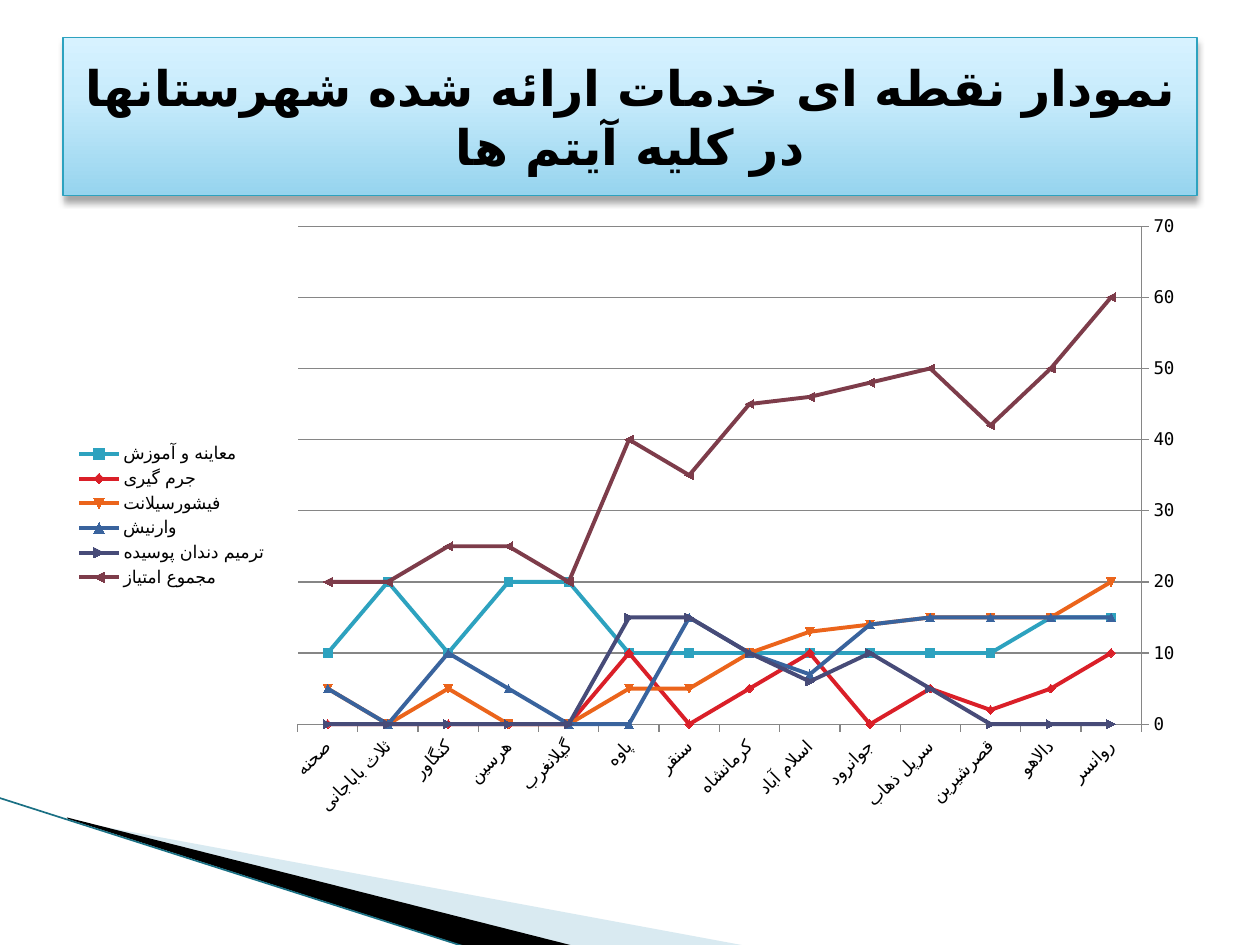
from lxml.etree import SubElement
from pptx import Presentation
from pptx.chart.data import CategoryChartData as ChartData
from pptx.dml.color import RGBColor
from pptx.enum.chart import XL_CHART_TYPE as ChartType, XL_LEGEND_POSITION as LegendSide, XL_TICK_MARK as Tick
from pptx.enum.shapes import MSO_CONNECTOR as Connector, MSO_SHAPE as Shape
from pptx.enum.text import MSO_ANCHOR as Anchor, PP_ALIGN as Align
from pptx.oxml import parse_xml
from pptx.oxml.ns import nsdecls, qn
from pptx.util import Cm, Pt

TITLE = "نمودار نقطه ای خدمات ارائه شده شهرستانها در کلیه آیتم ها"
CITIES = ["روانسر", "دالاهو", "قصرشیرین", "سرپل ذهاب", "جوانرود", "اسلام آباد", "کرمانشاه",
          "سنقر", "پاوه", "گیلانغرب", "هرسین", "کنگاور", "ثلاث باباجانی", "صحنه"]
SERVICES = [
    ("معاینه و آموزش", "2DA2BF", [15, 15, 10, 10, 10, 10, 10, 10, 10, 20, 20, 10, 20, 10]),
    ("جرم گیری", "DA1F28", [10, 5, 2, 5, 0, 10, 5, 0, 10, 0, 0, 0, 0, 0]),
    ("فیشورسیلانت", "EB641B", [20, 15, 15, 15, 14, 13, 10, 5, 5, 0, 0, 5, 0, 5]),
    ("وارنیش", "39639D", [15, 15, 15, 15, 14, 7, 10, 15, 0, 0, 5, 10, 0, 5]),
    ("ترمیم دندان پوسیده", "474B78", [0, 0, 0, 5, 10, 6, 10, 15, 15, 0, 0, 0, 0, 0]),
    ("مجموع امتیاز", "7D3C4A", [60, 50, 42, 50, 48, 46, 45, 35, 40, 20, 25, 25, 20, 20]),
]


def rgb(code):
    return RGBColor.from_string(code)


class SlideBuilder:
    font = "DejaVu Sans Mono"
    script_font = "DejaVu Sans"
    ink = "000000"
    accent = "2DA2BF"
    grid = "868686"

    def __init__(self, page):
        self.page = page

    def polygon(self, points, color, opacity=100):
        start, *rest = [(Cm(x), Cm(y)) for x, y in points]
        builder = self.page.shapes.build_freeform(*start)
        builder.add_line_segments(rest)
        shape = builder.convert_to_shape()
        shape.shadow.inherit = False
        shape.fill.solid()
        shape.fill.fore_color.rgb = rgb(color)
        shape.line.fill.background()
        if opacity < 100:
            tint = shape.fill._xPr.find(".//" + qn("a:srgbClr"))
            SubElement(tint, qn("a:alpha"), val=str(opacity * 1000))

    def line(self, start, end, color, width):
        ends = [Cm(value) for value in (*start, *end)]
        connector = self.page.shapes.add_connector(Connector.STRAIGHT, *ends)
        connector.line.color.rgb = rgb(color)
        connector.line.width = Pt(width)
        SubElement(connector._element.spPr, qn("a:effectLst"))

    def title(self, text, frame, stops):
        box = self.page.shapes.add_shape(Shape.RECTANGLE, *map(Cm, frame))
        box.line.color.rgb = rgb(self.accent)
        box.line.width = Pt(0.75)
        properties = box._element.spPr
        colors = "".join(f'<a:gs pos="{place * 1000}"><a:srgbClr val="{color}"/></a:gs>'
                         for place, color in stops)
        properties.insert(2, parse_xml(
            f'<a:gradFill {nsdecls("a")} rotWithShape="1"><a:gsLst>{colors}</a:gsLst>'
            '<a:lin ang="16200000" scaled="0"/></a:gradFill>'))
        properties.append(parse_xml(
            f'<a:effectLst {nsdecls("a")}><a:outerShdw blurRad="{Pt(4)}" dist="{Pt(3)}" '
            f'dir="5400000" rotWithShape="0"><a:srgbClr val="{self.ink}">'
            '<a:alpha val="35000"/></a:srgbClr></a:outerShdw></a:effectLst>'))
        box.text_frame.word_wrap = True
        box.text_frame.vertical_anchor = Anchor.MIDDLE
        para = box.text_frame.paragraphs[0]
        para.alignment = Align.CENTER
        para._p.get_or_add_pPr().set("rtl", "1")
        span = para.add_run()
        span.text = text
        self.style(span.font, 28)
        span.font.bold = True

    def style(self, font, size):
        font.name = self.font
        font.size = Pt(size)
        font.color.rgb = rgb(self.ink)
        SubElement(font._element, qn("a:cs"), typeface=self.script_font)

    def chart(self, frame, categories, rows):
        data = ChartData()
        data.categories = categories
        for name, _, values in rows:
            data.add_series(name, values)
        chart = self.page.shapes.add_chart(ChartType.LINE_MARKERS, *map(Cm, frame), data).chart
        self.style(chart.font, 10)
        chart.has_title = False
        chart.has_legend = True
        chart.legend.position = LegendSide.LEFT
        chart.legend.include_in_layout = False
        chart.plots[0].vary_by_categories = False
        for series, (_, color, _) in zip(chart.plots[0].series, rows):
            series.smooth = False
            series.format.line.color.rgb = rgb(color)
            series.format.line.width = Pt(2.25)
            marker = series.marker.format
            marker.fill.solid()
            marker.fill.fore_color.rgb = rgb(color)
            marker.line.color.rgb = rgb(color)
        across, up = chart.category_axis, chart.value_axis
        across.reverse_order = True
        self.style(across.tick_labels.font, 10)
        across._element.find(qn("c:txPr")).find(qn("a:bodyPr")).set("rot", "-2700000")
        up.minimum_scale, up.maximum_scale, up.major_unit = 0, 70, 10
        up.has_major_gridlines = True
        for axis in (across, up):
            axis.major_tick_mark = Tick.OUTSIDE
            axis.minor_tick_mark = Tick.NONE
        for part in (across, up, up.major_gridlines):
            part.format.line.color.rgb = rgb(self.grid)
            part.format.line.width = Pt(0.75)


def main():
    deck = Presentation()
    deck.slide_width, deck.slide_height = Cm(25.4), Cm(19.05)
    slide = SlideBuilder(deck.slides.add_slide(deck.slide_layouts[6]))
    slide.polygon([(1.4, 16.54), (15.11, 19.08), (11.58, 19.08), (1.4, 16.51)], "A0CBDC", 40)
    slide.polygon([(1.35, 16.48), (11.61, 19.08), (9.45, 19.1), (1.37, 16.51)], "000000")
    slide.line((-0.03, 16.08), (9.42, 19.1), "1A7084", 0.95)
    slide.chart((1.27, 4.11, 22.86, 12.57), CITIES, SERVICES)
    slide.title(TITLE, (1.27, 0.76, 22.86, 3.18), [(0, "96D4EE"), (65, "C9ECFC"), (100, "D7F2FF")])
    deck.save("out.pptx")


if __name__ == "__main__":
    main()
